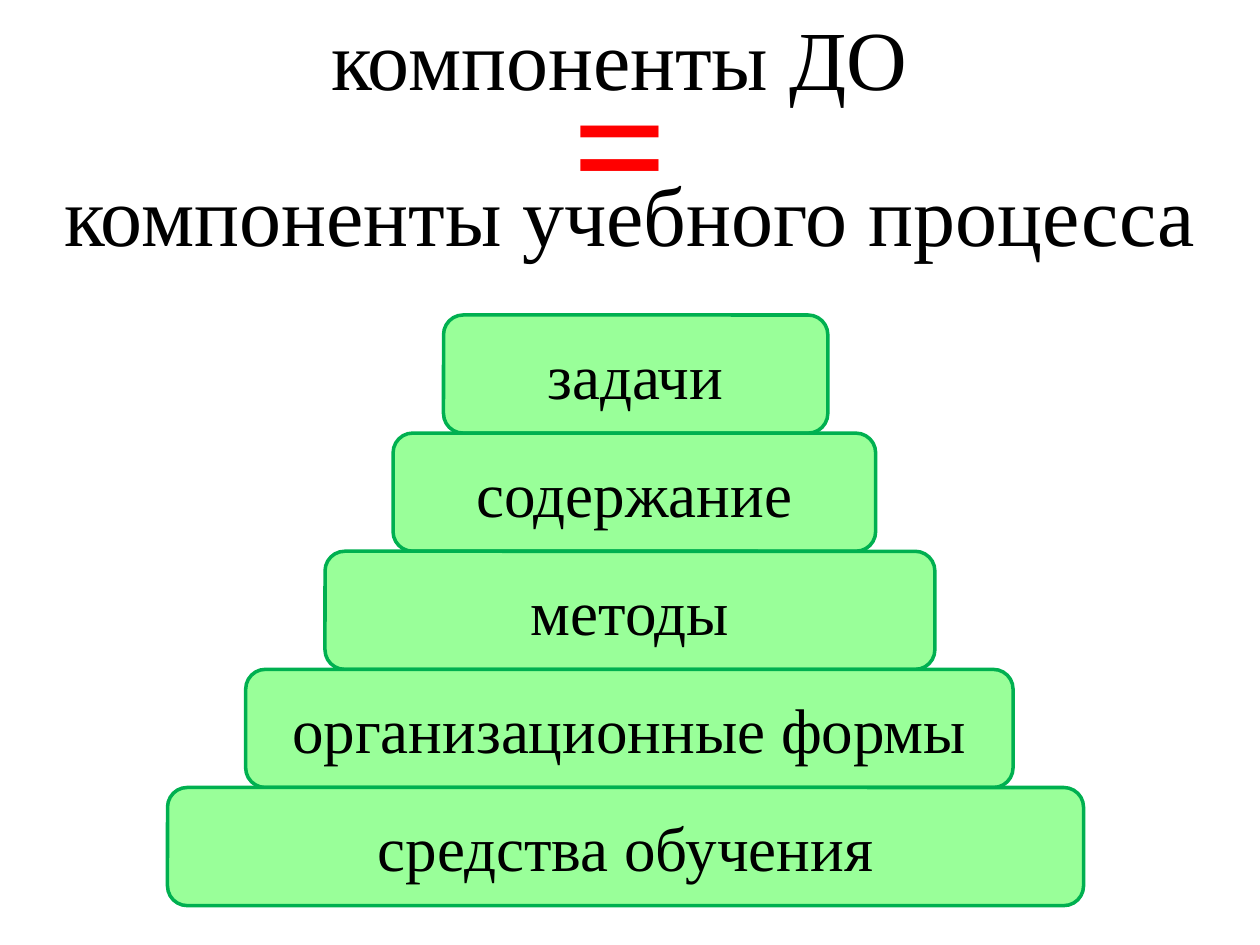
from pptx import Presentation
from pptx.dml.color import RGBColor
from pptx.enum.shapes import MSO_SHAPE
from pptx.enum.text import MSO_ANCHOR, PP_ALIGN
from pptx.util import Inches, Pt

HEADING = ["компоненты ДО ", "компоненты учебного процесса"]

# Pyramid levels from top to bottom: label, left, width
LEVELS = [
    ("задачи", 3.52, 3.05),
    ("содержание", 3.12, 3.83),
    ("методы", 2.58, 4.84),
    ("организационные формы", 1.95, 6.09),
    ("средства обучения", 1.33, 7.27),
]
PYRAMID_TOP, LEVEL_STEP = 2.5, 0.9375
HEADING_GAP = 32


def color(value):
    return RGBColor.from_string(value)


def write(frame, lines, size, ink="000000", bold=False, gap=0):
    frame.word_wrap = True
    for i, line in enumerate(lines):
        paragraph = frame.add_paragraph() if i else frame.paragraphs[0]
        paragraph.alignment = PP_ALIGN.CENTER
        if i:
            paragraph.space_before = Pt(gap)
        run = paragraph.add_run()
        run.text = line
        run.font.name = "Times New Roman"
        run.font.size = Pt(size)
        run.font.bold = bold
        run.font.color.rgb = color(ink)


prs = Presentation()
prs.slide_width, prs.slide_height = Inches(10), Inches(7.5)
slide = prs.slides.add_slide(prs.slide_layouts[6])

# Heading and the equals sign between its lines
heading = slide.shapes.add_textbox(0, 0, Inches(10), Inches(2.19))
write(heading.text_frame, HEADING, 48, gap=HEADING_GAP)

equals = slide.shapes.add_textbox(Inches(3.91), Inches(0.24), Inches(2.03), Inches(1.72))
write(equals.text_frame, ["="], 96, "FF0000", bold=True)

# Pyramid
for row, (label, left, width) in enumerate(LEVELS):
    level = slide.shapes.add_shape(
        MSO_SHAPE.ROUNDED_RECTANGLE,
        Inches(left), Inches(PYRAMID_TOP + row * LEVEL_STEP),
        Inches(width), Inches(LEVEL_STEP),
    )
    level.shadow.inherit = False
    level.fill.solid()
    level.fill.fore_color.rgb = color("99FF99")
    level.line.color.rgb = color("00B050")
    level.line.width = Pt(2)
    level.text_frame.vertical_anchor = MSO_ANCHOR.MIDDLE
    write(level.text_frame, [label], 36)

prs.save("out.pptx")
